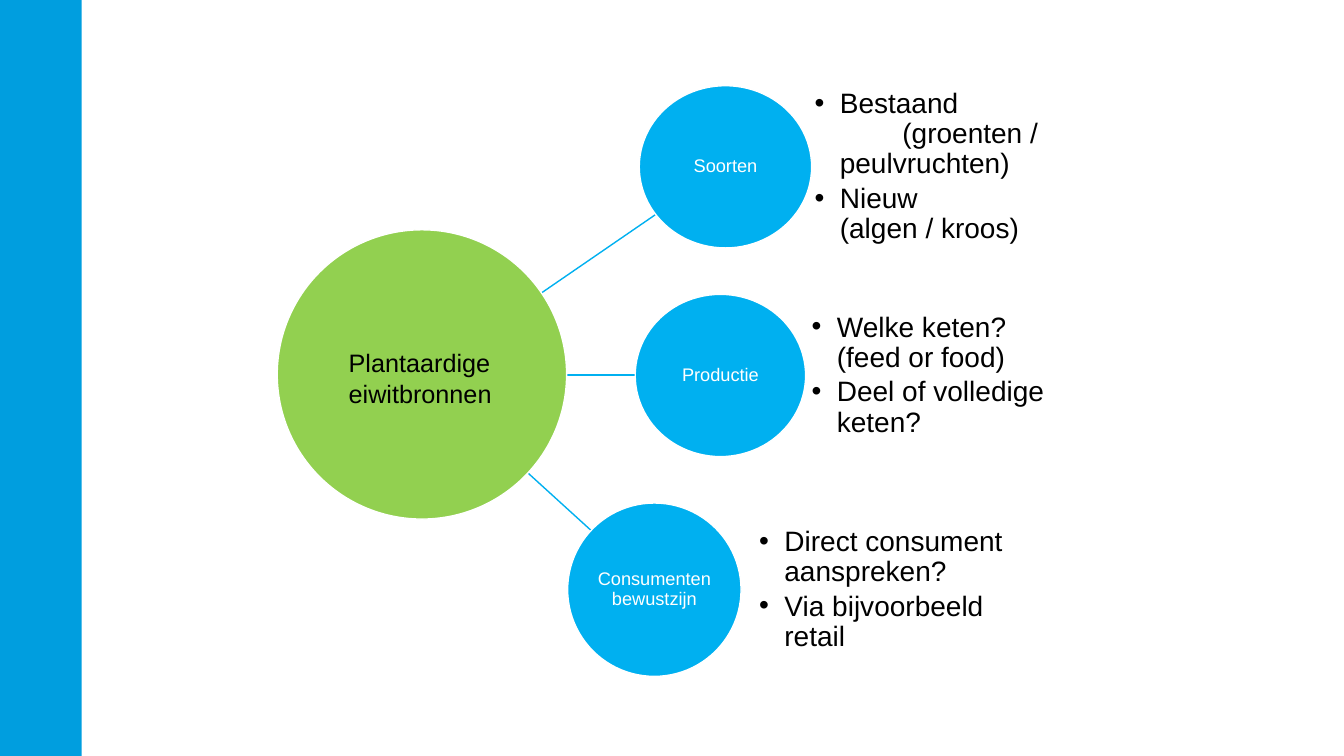
import pptx
import pptx.util
import pptx.dml.color
import pptx.enum.shapes
import pptx.enum.text
import pptx.oxml.ns
from lxml import etree

Inches = pptx.util.Inches
Pt = pptx.util.Pt
ALIGN = pptx.enum.text.PP_ALIGN
ANCHOR = pptx.enum.text.MSO_ANCHOR
SHAPE = pptx.enum.shapes.MSO_SHAPE
qn = pptx.oxml.ns.qn

COLORS = {
    "bar": "009EDF",
    "blue": "00B0F0",
    "green": "92D050",
    "white": "FFFFFF",
    "black": "000000",
}

HUB = (2.75, 2.28, 2.87, 2.87)
START = 5.19

TOPICS = [
    {
        "label": "Soorten",
        "disc": (6.34, 0.85, 1.71, 1.61),
        "list": (8.08, 2.57),
        "line": (3.03, 6.5, 2.13),
        "items": ["Bestaand\v\t(groenten / peulvruchten)", "Nieuw\v(algen / kroos)"],
    },
    {
        "label": "Productie",
        "disc": (6.3, 2.92, 1.69, 1.61),
        "list": (8.05, 2.54),
        "line": (3.72, 6.3, 3.72),
        "items": ["Welke keten? (feed or food)", "Deel of volledige keten?"],
    },
    {
        "label": "Consumenten bewustzijn",
        "disc": (5.63, 4.99, 1.72, 1.72),
        "list": (7.53, 2.59),
        "line": (4.65, 5.86, 5.26),
        "items": ["Direct consument aanspreken?", "Via bijvoorbeeld retail"],
    },
]


def tint(name):
    return pptx.dml.color.RGBColor.from_string(COLORS[name])


def bullet(para):
    props = para._p.get_or_add_pPr()
    props.set("marL", str(Inches(0.25)))
    props.set("indent", str(Inches(-0.25)))
    font = etree.SubElement(props, qn("a:buFont"))
    font.set("typeface", "Arial")
    mark = etree.SubElement(props, qn("a:buChar"))
    mark.set("char", "•")
    tabs = etree.SubElement(props, qn("a:tabLst"))
    stop = etree.SubElement(tabs, qn("a:tab"))
    stop.set("pos", str(Inches(0.87)))
    stop.set("algn", "l")


def write(shape, lines, size=18, color="black", align=ALIGN.LEFT,
          anchor=ANCHOR.MIDDLE, inset=0, spacing=None, after=0, bullets=False):
    frame = shape.text_frame
    frame.word_wrap = True
    frame.vertical_anchor = anchor
    if inset is not None:
        frame.margin_left = frame.margin_right = Inches(inset)
        frame.margin_top = frame.margin_bottom = Inches(inset)
    for index, line in enumerate(lines):
        para = frame.add_paragraph() if index else frame.paragraphs[0]
        para.text = line
        para.alignment = align
        para.line_spacing = spacing
        para.space_after = Pt(after)
        if bullets:
            bullet(para)
        para.font.name = "Arial"
        para.font.size = Pt(size)
        para.font.color.rgb = tint(color)


def block(slide, kind, box, fill, edge=None):
    shape = slide.shapes.add_shape(kind, *map(Inches, box))
    shape.shadow.inherit = False
    shape.fill.solid()
    shape.fill.fore_color.rgb = tint(fill)
    if edge:
        shape.line.color.rgb = tint(edge)
        shape.line.width = Pt(1)
    else:
        shape.line.fill.background()
    return shape


def link(slide, top, right, end):
    line = slide.shapes.add_connector(
        pptx.enum.shapes.MSO_CONNECTOR.STRAIGHT,
        *map(Inches, (START, top, right, end)))
    line.line.color.rgb = tint("blue")
    line.line.width = Pt(1)
    etree.SubElement(line._element.spPr, qn("a:effectLst"))


def topic(slide, data):
    disc = block(slide, SHAPE.OVAL, data["disc"], "blue", "white")
    write(disc, [data["label"]], size=13, color="white", align=ALIGN.CENTER,
          inset=0.01, spacing=0.9)
    left, width = data["list"]
    top, height = data["disc"][1], data["disc"][3]
    box = slide.shapes.add_textbox(*map(Inches, (left, top, width, height)))
    write(box, data["items"], size=20, spacing=0.9, after=3, bullets=True)


def main():
    deck = pptx.Presentation()
    deck.slide_width = Inches(13.33)
    deck.slide_height = Inches(7.5)
    slide = deck.slides.add_slide(deck.slide_layouts[6])
    block(slide, SHAPE.RECTANGLE, (0, 0, 0.81, 7.5), "bar")
    for data in TOPICS:
        link(slide, *data["line"])
    block(slide, SHAPE.OVAL, HUB, "green", "white")
    for data in TOPICS:
        topic(slide, data)
    name = slide.shapes.add_textbox(*map(Inches, (3.36, 3.4, 1.68, 0.71)))
    write(name, ["Plantaardige eiwitbronnen"], anchor=ANCHOR.TOP, inset=None)
    deck.save("out.pptx")


if __name__ == "__main__":
    main()
